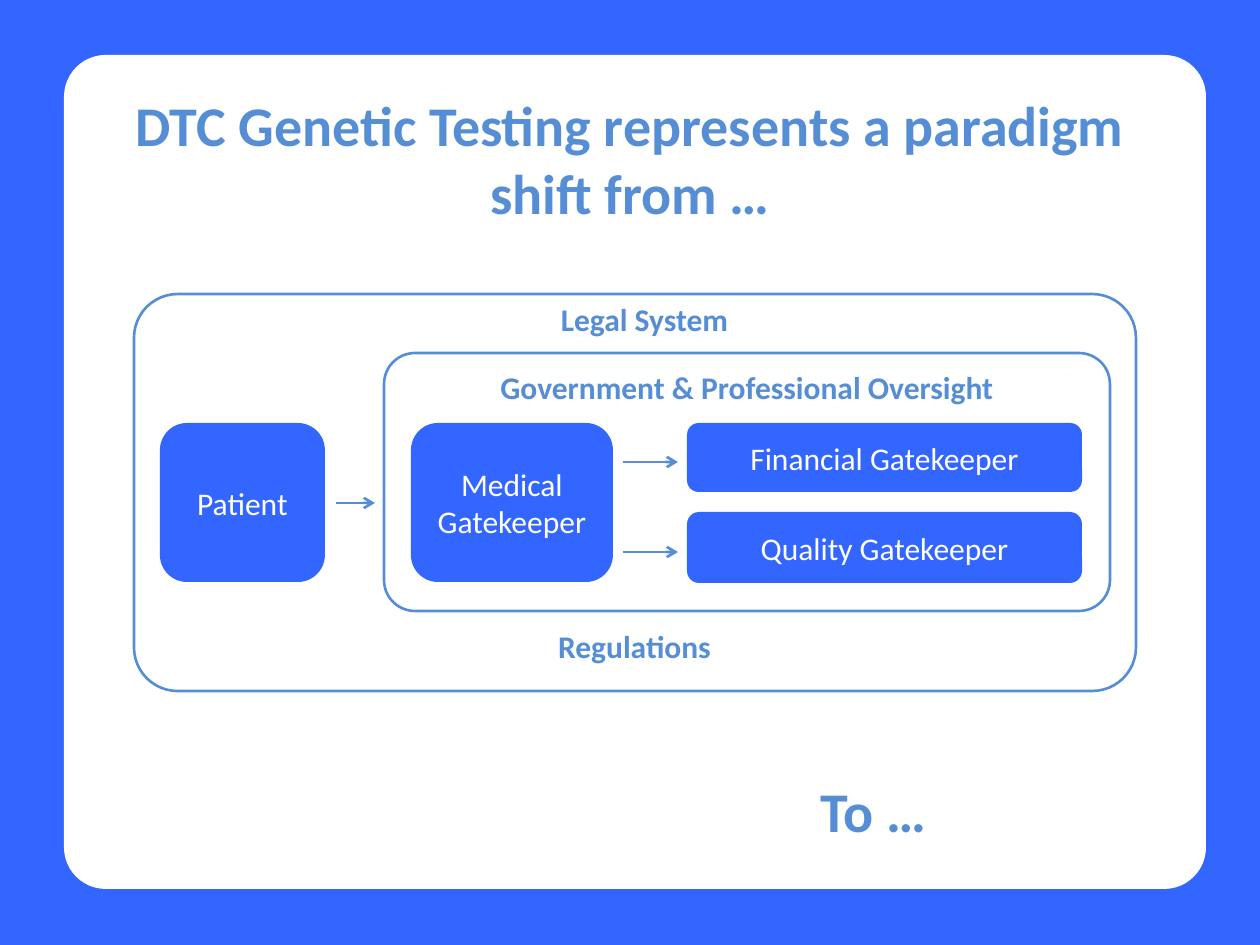
from lxml.etree import SubElement
from pptx import Presentation
from pptx.dml.color import RGBColor
from pptx.enum.shapes import MSO_CONNECTOR, MSO_SHAPE
from pptx.enum.text import MSO_ANCHOR, PP_ALIGN
from pptx.oxml.ns import qn
from pptx.util import Inches, Pt

SCALE = Inches(1) / 126
BLUE, SKY, WHITE = "3366FF", "558ED5", "FFFFFF"


def color(value):
    return RGBColor.from_string(value)


def write(shape, text, size, hex_color, bold=False, align=PP_ALIGN.CENTER,
          anchor=MSO_ANCHOR.TOP, inset=(13, 6)):
    frame = shape.text_frame
    frame.text = text
    side, edge = [round(value * SCALE) for value in inset]
    frame_format = {"word_wrap": True, "vertical_anchor": anchor,
                    "margin_left": side, "margin_right": side,
                    "margin_top": edge, "margin_bottom": edge}
    for name, value in frame_format.items():
        setattr(frame, name, value)
    paragraph = frame.paragraphs[0]
    paragraph.alignment = align
    font = paragraph.runs[0].font
    for name, value in {"name": "Calibri", "size": Pt(size), "bold": bold}.items():
        setattr(font, name, value)
    font.color.rgb = color(hex_color)


presentation = Presentation()
presentation.slide_width = round(1260 * SCALE)
presentation.slide_height = round(945 * SCALE)
slide = presentation.slides.add_slide(presentation.slide_layouts[5])
slide.background.fill.solid()
slide.background.fill.fore_color.rgb = color(BLUE)
shapes = slide.shapes

rectangles = [
    ((64, 55, 1142, 834), 0.05, WHITE, None, ""),
    ((134, 294, 1002, 397), 0.11, None, SKY, ""),
    ((160, 423, 165, 159), 0.17, BLUE, None, "Patient"),
    ((411, 423, 202, 159), 0.17, BLUE, None, "Medical Gatekeeper"),
    ((687, 423, 395, 69), 0.17, BLUE, None, "Financial Gatekeeper"),
    ((687, 512, 395, 71), 0.17, BLUE, None, "Quality Gatekeeper"),
    ((384, 353, 726, 258), 0.12, None, SKY, ""),
]
for box, radius, fill, line, text in rectangles:
    shape = shapes.add_shape(MSO_SHAPE.ROUNDED_RECTANGLE,
                             *[round(value * SCALE) for value in box])
    shape.adjustments[0] = radius
    shape.shadow.inherit = False
    if fill:
        shape.fill.solid()
        shape.fill.fore_color.rgb = color(fill)
    else:
        shape.fill.background()
    if line:
        shape.line.color.rgb = color(line)
        shape.line.width = Pt(1.5)
    else:
        shape.line.fill.background()
    if text:
        write(shape, text, 18, WHITE, anchor=MSO_ANCHOR.MIDDLE, inset=(5, 5))

for start, end, y in [(336, 375, 503), (623, 678, 462), (623, 678, 552)]:
    arrow = shapes.add_connector(
        MSO_CONNECTOR.STRAIGHT, *[round(value * SCALE) for value in (start, y, end, y)])
    arrow.line.color.rgb = color(SKY)
    arrow.line.width = Pt(1.5)
    SubElement(arrow.line._get_or_add_ln(), qn("a:tailEnd"), type="arrow")
    SubElement(arrow._element.spPr, qn("a:effectLst"))

labels = [
    ("Government & Professional Oversight", (453, 362, 588, 50), 18, PP_ALIGN.CENTER),
    ("Legal System", (382, 294, 525, 50), 18, PP_ALIGN.CENTER),
    ("Regulations", (372, 621, 525, 50), 18, PP_ALIGN.CENTER),
    ("To …", (808, 771, 277, 81), 32, PP_ALIGN.LEFT),
]
for text, box, size, align in labels:
    label = shapes.add_textbox(*[round(value * SCALE) for value in box])
    write(label, text, size, SKY, bold=True, align=align)

title = shapes.title
title_box = {"left": 104, "top": 85, "width": 1052, "height": 149}
for name, value in title_box.items():
    setattr(title, name, round(value * SCALE))
write(title, "DTC Genetic Testing represents a paradigm shift from …", 32, SKY, bold=True)
shapes._spTree.append(title._element)

presentation.save("out.pptx")
